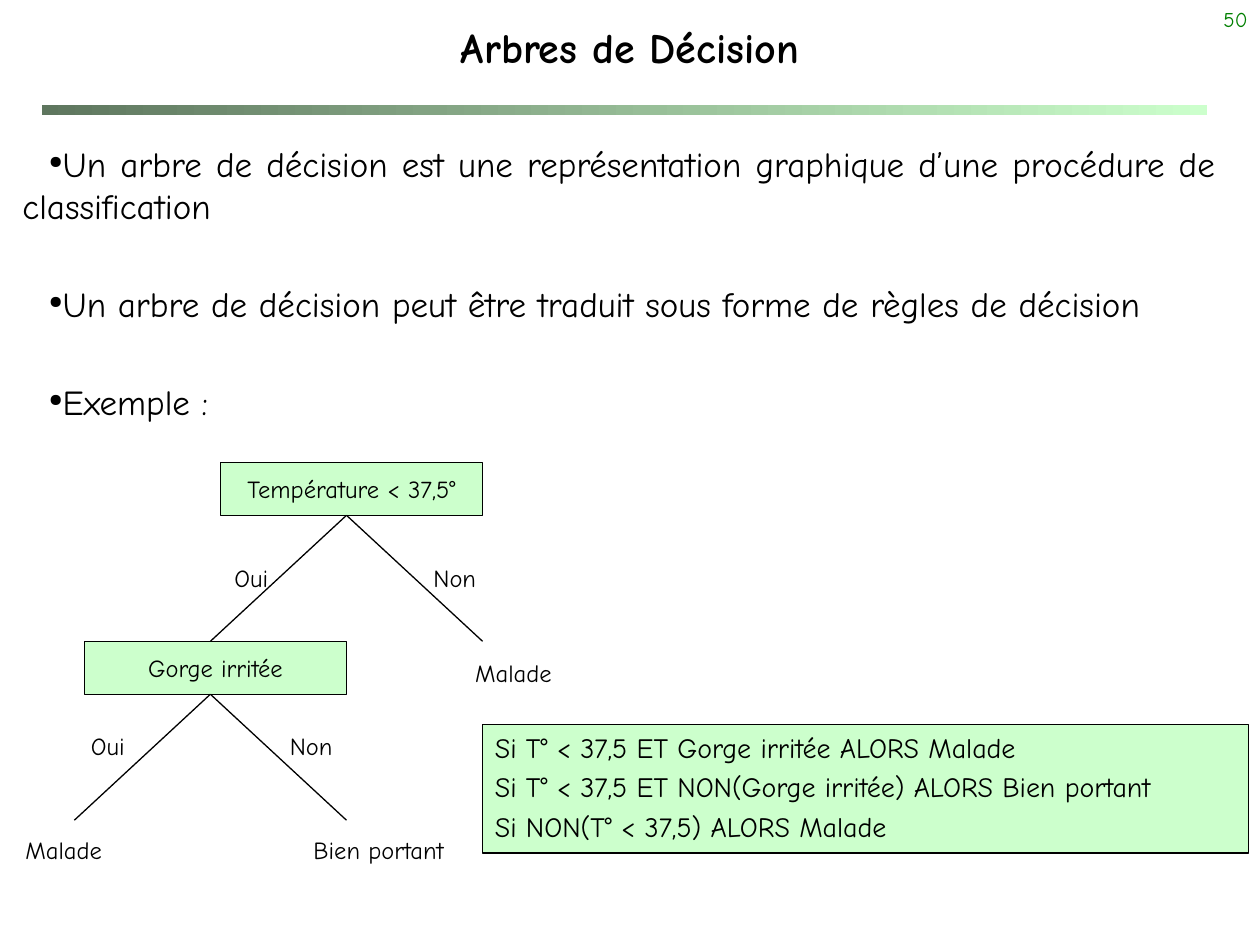
from lxml import etree
from pptx import Presentation
from pptx.dml.color import RGBColor
from pptx.enum.shapes import MSO_CONNECTOR, MSO_SHAPE
from pptx.enum.text import MSO_ANCHOR, PP_ALIGN
from pptx.oxml.ns import qn
from pptx.util import Inches, Pt

COLORS = {"ink": "000000", "number": "008000", "node": "CCFFCC", "bar_start": "5E765E"}
FONT = "Comic Neue"
NODE_WIDTH, NODE_HEIGHT = 2.08, 0.42
BRANCH_SPREAD, BRANCH_DROP = 1.08, 1.0
LABEL_HEIGHT = 0.33


def color(name):
    return RGBColor.from_string(COLORS[name])


def write(shape, lines, size, align, ink="ink", bold=False, gap=0.0,
          anchor=MSO_ANCHOR.TOP, wrap=True):
    """Fill a shape with one paragraph per line, spaced by gap points."""
    frame = shape.text_frame
    frame.word_wrap = wrap
    frame.vertical_anchor = anchor
    for index, line in enumerate(lines):
        para = frame.paragraphs[0] if index == 0 else frame.add_paragraph()
        para.alignment = align
        para.space_before = Pt(gap if index else min(gap, size * 0.2))
        span = para.add_run()
        span.text = line
        span.font.name = FONT
        span.font.size = Pt(size)
        span.font.bold = bold
        span.font.color.rgb = color(ink)
    return frame.paragraphs


def add_text(page, box, lines, size, align, **options):
    shape = page.shapes.add_textbox(*map(Inches, box))
    return write(shape, lines, size, align, **options)


def add_panel(page, box):
    panel = page.shapes.add_shape(MSO_SHAPE.RECTANGLE, *map(Inches, box))
    panel.shadow.inherit = False
    panel.fill.solid()
    panel.fill.fore_color.rgb = color("node")
    panel.line.color.rgb = color("ink")
    panel.line.width = Pt(0.75)
    return panel


def add_branch(page, start, end):
    branch = page.shapes.add_connector(MSO_CONNECTOR.STRAIGHT, *map(Inches, start + end))
    branch.line.color.rgb = color("ink")
    branch.line.width = Pt(0.75)
    etree.SubElement(branch._element.spPr, qn("a:effectLst"))


def add_label(page, left, top, width, label):
    add_text(page, (left, top, width, LABEL_HEIGHT), [label], 14, PP_ALIGN.CENTER,
             wrap=False)


def add_header(page, box, title, number):
    left, top, width, height = box
    bar = page.shapes.add_shape(MSO_SHAPE.RECTANGLE, Inches(left + 0.33),
                                Inches(top + height - 0.08), Inches(9.25), Inches(0.08))
    bar.shadow.inherit = False
    bar.line.fill.background()
    bar.fill.gradient()
    bar.fill.gradient_angle = 0
    stops = zip(bar.fill.gradient_stops, (0, 1), ("bar_start", "node"))
    for stop, position, name in stops:
        stop.position = position
        stop.color.rgb = color(name)
    add_text(page, (left + width - 2.08, top, 2.08, 0.5), [number], 12,
             PP_ALIGN.RIGHT, ink="number")
    add_text(page, (left, top + 0.08, width, 0.58), [title], 24, PP_ALIGN.CENTER,
             bold=True, anchor=MSO_ANCHOR.MIDDLE)


def add_points(page, box, points):
    for para in add_text(page, box, points, 20, PP_ALIGN.JUSTIFY, gap=32):
        props = para._p.get_or_add_pPr()
        props.set("marL", "0")
        props.set("indent", str(Inches(0.21)))
        etree.SubElement(props, qn("a:buSzPct"), val="50000")
        etree.SubElement(props, qn("a:buChar"), char="●")


def add_decision(page, box, question, answers):
    """Question node with two branches; answers are (left, top, width, text)."""
    left, top, width, height = box
    node = add_panel(page, box)
    write(node, [question], 14, PP_ALIGN.CENTER, gap=2.8,
          anchor=MSO_ANCHOR.MIDDLE, wrap=False)
    # Branches leave slightly left of the node's centre
    fork = (left + 1.0, top + height)
    for side in (-1, 1):
        add_branch(page, fork, (fork[0] + side * BRANCH_SPREAD, fork[1] + BRANCH_DROP))
    for answer in answers:
        add_label(page, *answer)


def add_tree(page, box):
    left, top = box[:2]
    level = NODE_HEIGHT + BRANCH_DROP
    add_decision(page, (left + BRANCH_SPREAD, top, NODE_WIDTH, NODE_HEIGHT),
                 "Température < 37,5°",
                 [(1.74, 4.42, 0.51, "Oui"), (3.33, 4.42, 0.56, "Non"),
                  (3.65, 5.17, 0.85, "Malade")])
    add_decision(page, (left, top + level, NODE_WIDTH, NODE_HEIGHT),
                 "Gorge irritée",
                 [(0.6, 5.75, 0.51, "Oui"), (2.19, 5.75, 0.56, "Non"),
                  (0.08, 6.58, 0.85, "Malade"), (2.34, 6.58, 1.33, "Bien portant")])


def add_rules(page, box, rules):
    write(add_panel(page, box), rules, 16, PP_ALIGN.JUSTIFY, gap=3.2)


def main():
    deck = Presentation()
    deck.slide_width, deck.slide_height = Inches(10), Inches(7.5)
    page = deck.slides.add_slide(deck.slide_layouts[6])
    add_header(page, (0, 0, 10, 0.91), "Arbres de Décision", "50")
    add_points(page, (0.08, 1.08, 9.67, 5.83), [
        "Un arbre de décision est une représentation graphique d’une procédure de classification",
        "Un arbre de décision peut être traduit sous forme de règles de décision",
        "Exemple :",
    ])
    add_tree(page, (0.67, 3.67, 3.83, 3.24))
    add_rules(page, (3.83, 5.75, 6.08, 1.02), [
        "Si T° < 37,5 ET Gorge irritée ALORS Malade",
        "Si T° < 37,5 ET NON(Gorge irritée) ALORS Bien portant",
        "Si NON(T° < 37,5) ALORS Malade",
    ])
    deck.save("out.pptx")


if __name__ == "__main__":
    main()
